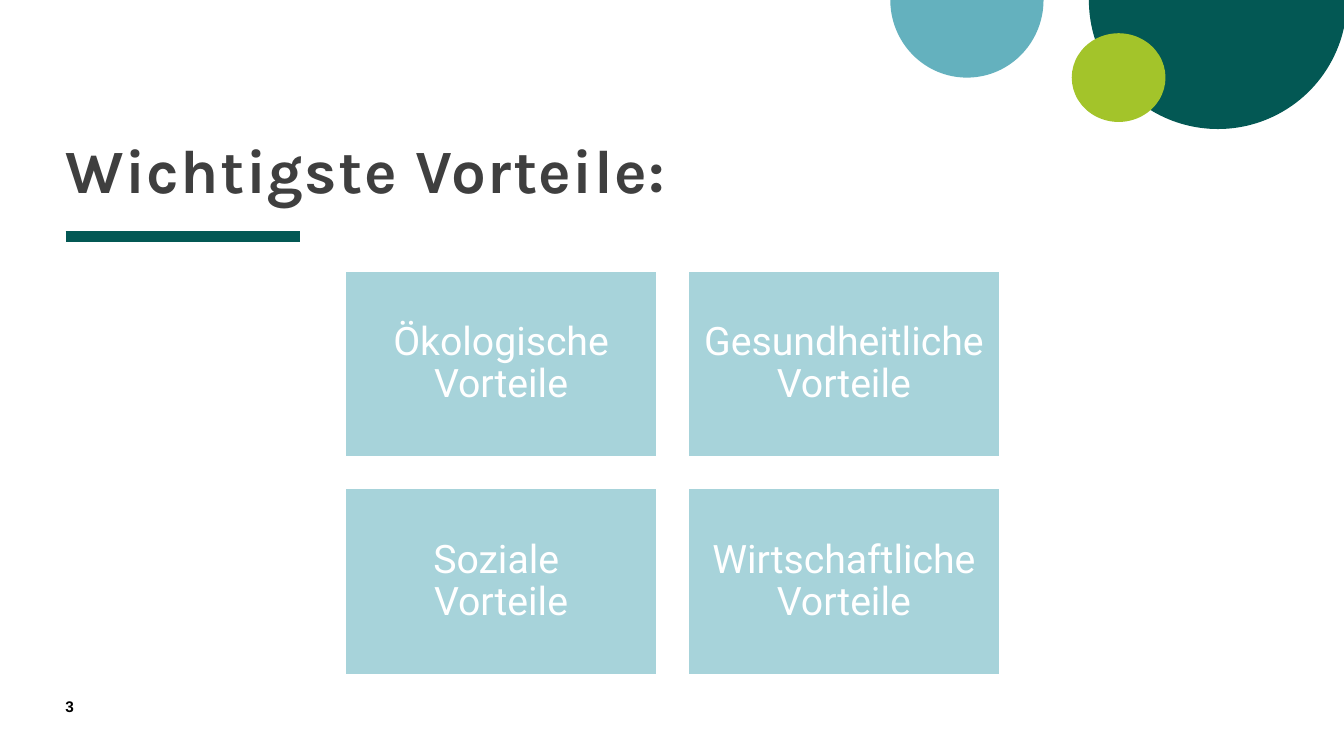
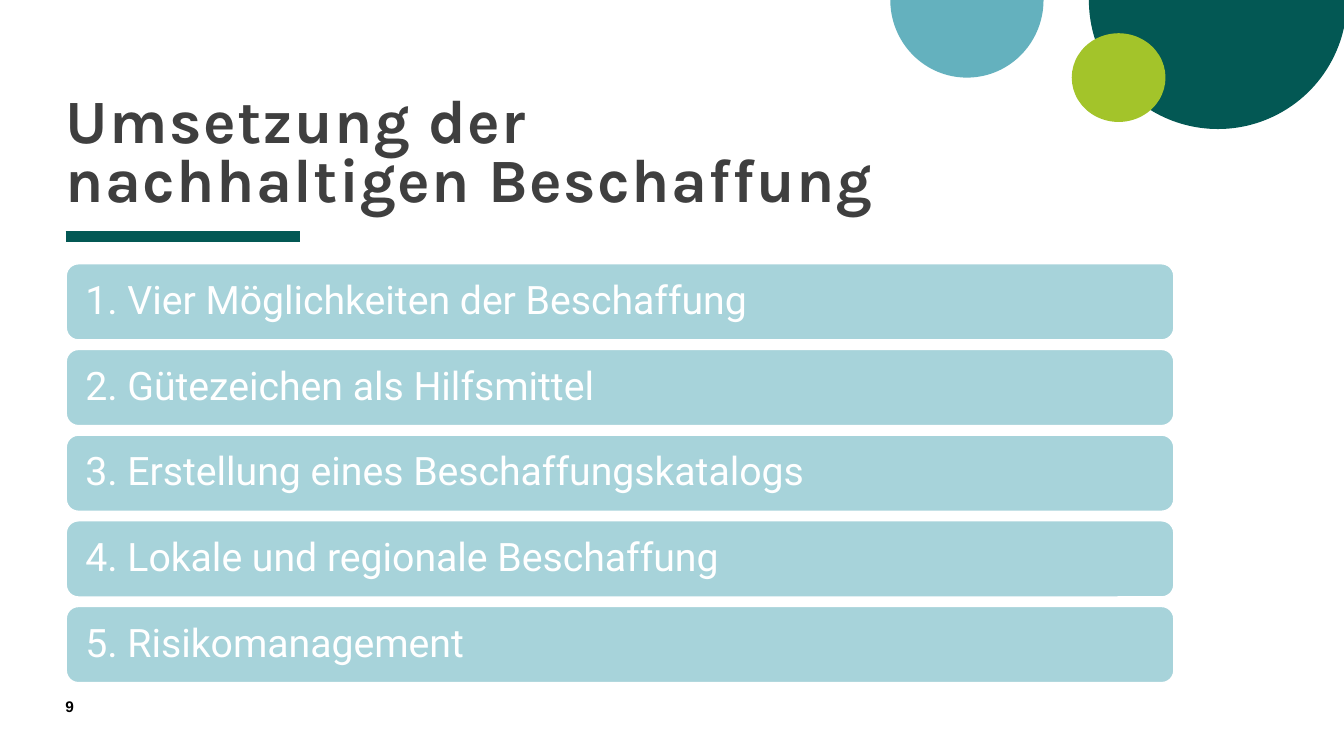
"""Build two slides on the benefits and the rollout of sustainable procurement."""
from dataclasses import dataclass

import lxml.etree
import pptx
import pptx.dml.color
import pptx.enum.shapes
import pptx.enum.text
import pptx.oxml.ns
import pptx.util

RGBColor = pptx.dml.color.RGBColor
Shape = pptx.enum.shapes.MSO_SHAPE
Align = pptx.enum.text.PP_ALIGN
Anchor = pptx.enum.text.MSO_ANCHOR
Inches = pptx.util.Inches
Pt = pptx.util.Pt

FOREST = RGBColor(0x03, 0x58, 0x54)
TEAL = RGBColor(0x64, 0xB1, 0xBE)
LIME = RGBColor(0xA3, 0xC4, 0x2A)
MIST = RGBColor(0xA7, 0xD3, 0xDA)
CHARCOAL = RGBColor(0x3F, 0x3F, 0x3F)
WHITE = RGBColor(0xFF, 0xFF, 0xFF)
BLACK = RGBColor(0x00, 0x00, 0x00)

MARGIN = 0.65
RULE_TOP = 2.35
RULE_WIDTH = 2.33
HALF_TURN = 108


@dataclass(frozen=True)
class Area:
    left: float
    top: float
    width: float
    height: float

    def lengths(self) -> list:
        return [Inches(value) for value in (self.left, self.top, self.width, self.height)]


@dataclass(frozen=True)
class Grid:
    origin: Area
    columns: int
    column_pitch: float
    row_pitch: float

    def cell(self, index: int) -> Area:
        row, column = divmod(index, self.columns)
        return Area(self.origin.left + column * self.column_pitch,
                    self.origin.top + row * self.row_pitch,
                    self.origin.width, self.origin.height)


@dataclass(frozen=True)
class Disc:
    area: Area
    fill: RGBColor
    half: bool


@dataclass(frozen=True)
class TextStyle:
    font: str
    size: float
    color: RGBColor
    bold: bool = False
    line_spacing: float = 1.0
    tracking: int = 0
    align: Align = Align.LEFT
    anchor: Anchor = Anchor.TOP
    inset: float = 0.0
    left_inset: float = 0.0


@dataclass(frozen=True)
class Panels:
    grid: Grid
    preset: Shape
    style: TextStyle
    labels: tuple


@dataclass(frozen=True)
class Page:
    title: str
    title_area: Area
    number: int
    panels: Panels


TITLE = TextStyle("Karla", 44, CHARCOAL, True, 0.8, tracking=100, anchor=Anchor.BOTTOM)
NUMBER = TextStyle("Arial", 11, BLACK, True)
TILE = TextStyle("Roboto", 28, WHITE, False, 0.9, align=Align.CENTER,
                 anchor=Anchor.MIDDLE, inset=0.12, left_inset=0.12)
BAR = TextStyle("Roboto", 28, WHITE, False, 0.9,
                anchor=Anchor.MIDDLE, inset=0.12, left_inset=0.16)

NUMBER_AREA = Area(MARGIN, 6.92, 0.57, 0.27)
DISCS = (
    Disc(Area(10.8, -1.28, 2.56, 2.56), FOREST, True),
    Disc(Area(8.83, -0.77, 1.52, 1.54), TEAL, True),
    Disc(Area(10.63, 0.33, 0.93, 0.88), LIME, False),
)
PAGES = (
    Page("Wichtigste Vorteile:", Area(MARGIN, 0.3, 7.42, 1.74), 3, Panels(
        Grid(Area(3.42, 2.68, 3.1, 1.86), 2, 3.4, 2.16), Shape.RECTANGLE, TILE,
        ("Ökologische Vorteile", "Gesundheitliche Vorteile",
         "Soziale \nVorteile", "Wirtschaftliche Vorteile"))),
    Page("Umsetzung der nachhaltigen Beschaffung", Area(MARGIN, 0.39, 8.3, 1.74), 9, Panels(
        Grid(Area(MARGIN, 2.61, 11, 0.77), 1, 0, 0.85), Shape.ROUNDED_RECTANGLE, BAR,
        ("1. Vier Möglichkeiten der Beschaffung", "2. Gütezeichen als Hilfsmittel",
         "3. Erstellung eines Beschaffungskatalogs", "4. Lokale und regionale Beschaffung",
         "5. Risikomanagement"))),
)


def write_text(box, text: str, style: TextStyle) -> None:
    frame = box.text_frame
    frame.text = text
    frame.word_wrap = True
    frame.auto_size = pptx.enum.text.MSO_AUTO_SIZE.NONE
    frame.vertical_anchor = style.anchor
    frame.margin_left = Inches(style.left_inset)
    frame.margin_top = frame.margin_right = frame.margin_bottom = Inches(style.inset)
    for para in frame.paragraphs:
        para.alignment = style.align
        para.line_spacing = style.line_spacing
        for span in para.runs:
            span.font.name = style.font
            span.font.size = Pt(style.size)
            span.font.bold = style.bold
            span.font.color.rgb = style.color
            if style.tracking:
                span.font._element.set("spc", str(style.tracking))


def add_filled(page, preset: Shape, area: Area, fill: RGBColor):
    shape = page.shapes.add_shape(preset, *area.lengths())
    shape.shadow.inherit = False
    shape.fill.solid()
    shape.fill.fore_color.rgb = fill
    shape.line.fill.background()
    return shape


def add_disc(page, disc: Disc):
    shape = add_filled(page, Shape.PIE if disc.half else Shape.OVAL, disc.area, disc.fill)
    if disc.half:
        shape.adjustments[0] = 0
        shape.adjustments[1] = HALF_TURN
    return shape


def add_rule(page):
    rule = page.shapes.add_connector(
        pptx.enum.shapes.MSO_CONNECTOR.STRAIGHT, Inches(MARGIN), Inches(RULE_TOP),
        Inches(MARGIN + RULE_WIDTH), Inches(RULE_TOP))
    rule.line.color.rgb = FOREST
    rule.line.width = Pt(8)
    lxml.etree.SubElement(rule.element.spPr, pptx.oxml.ns.qn("a:effectLst"))
    return rule


def decorate_layout(layout, page) -> None:
    for holder in list(layout.placeholders):
        if holder.placeholder_format.type != pptx.enum.shapes.PP_PLACEHOLDER.TITLE:
            holder.element.getparent().remove(holder.element)
    decorations = [add_rule(page)] + [add_disc(page, disc) for disc in DISCS]
    for decoration in decorations:
        layout.shapes.element.append(decoration.element)


def add_panels(page, panels: Panels) -> None:
    for index, label in enumerate(panels.labels):
        panel = add_filled(page, panels.preset, panels.grid.cell(index), MIST)
        panel.line.color.rgb = WHITE
        panel.line.width = Pt(2)
        write_text(panel, label, panels.style)


def fill_page(page, content: Page) -> None:
    title = page.shapes.title
    title.left, title.top, title.width, title.height = content.title_area.lengths()
    write_text(title, content.title, TITLE)
    add_panels(page, content.panels)
    number = page.shapes.add_textbox(*NUMBER_AREA.lengths())
    write_text(number, str(content.number), NUMBER)


def main() -> None:
    deck = pptx.Presentation()
    deck.slide_width, deck.slide_height = Inches(13.33), Inches(7.5)
    layout = deck.slide_layouts.get_by_name("Title Only")
    pages = [deck.slides.add_slide(layout) for _ in PAGES]
    decorate_layout(layout, pages[0])
    for page, content in zip(pages, PAGES):
        fill_page(page, content)
    deck.save("out.pptx")


if __name__ == "__main__":
    main()
